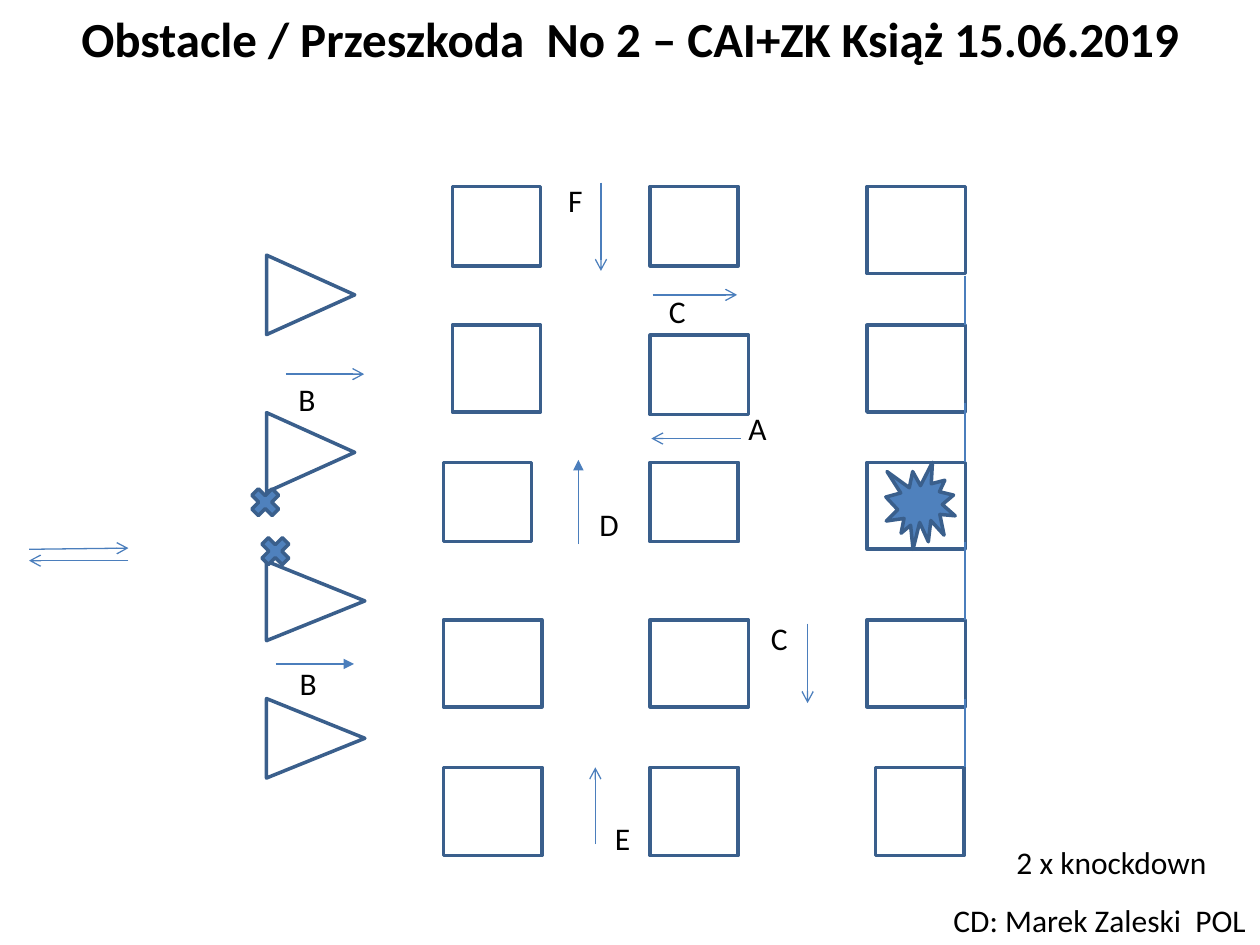
from lxml import etree
from pptx import Presentation
from pptx.dml.color import RGBColor
from pptx.enum.shapes import MSO_CONNECTOR, MSO_SHAPE
from pptx.enum.text import MSO_ANCHOR, MSO_AUTO_SIZE, PP_ALIGN
from pptx.oxml.ns import qn
from pptx.util import Pt

RECT = MSO_SHAPE.RECTANGLE
TRIANGLE = MSO_SHAPE.ISOSCELES_TRIANGLE
BURST = MSO_SHAPE.EXPLOSION1
CROSS = MSO_SHAPE.MATH_MULTIPLY
STRAIGHT = MSO_CONNECTOR.STRAIGHT
MIDDLE = MSO_ANCHOR.MIDDLE
FIT = MSO_AUTO_SIZE.SHAPE_TO_FIT_TEXT
CENTER = PP_ALIGN.CENTER

EDGE, FILL, PATH, INK = "3A5F8C", "4F81BD", "4B7EBC", "000000"
SIDE = 551.5

BOXES = [
    (258.5, 106.6, 50.4, 45.4), (371.5, 106.6, 50.4, 45.4), (495.4, 106.6, 56.2, 49.7),
    (258.5, 185.8, 50.4, 49.7), (371.5, 191.5, 56.2, 45.4), (495.4, 185.8, 56.2, 49.7),
    (253.4, 264.2, 50.4, 45.4), (371.5, 264.2, 50.4, 45.4), (495.4, 264.2, 56.2, 49.7),
    (253.4, 354.2, 56.2, 49.7), (371.5, 354.2, 56.2, 49.7), (495.4, 354.2, 56.2, 49.7),
    (253.4, 438.5, 56.2, 50.4), (371.5, 438.5, 50.4, 50.4), (500.4, 438.5, 50.4, 50.4),
]
WEDGES = [(145.8, 50.4), (235.8, 50.4), (320.7, 56.2), (399.2, 56.2)]
CROSSES = [(140.4, 275.8), (146.2, 303.8)]
RAILS = [(157.5, 185.8), (230.4, 264.2), (309.6, 354.2), (399.6, 438.5)]
ARROWS = [
    (16.6, 313.9, 73.4, 313.2, "arrow"),
    (73.4, 320.4, 16.6, 320.4, "arrow"),
    (423.4, 250.6, 372.2, 250.6, "arrow"),
    (163.4, 213.8, 208.1, 213.8, "arrow"),
    (461.5, 356.4, 461.5, 401.8, "arrow"),
    (343.4, 104.4, 343.4, 154.8, "arrow"),
    (340.2, 482.4, 340.2, 438.5, "arrow"),
    (373, 168.5, 421.2, 168.5, "arrow"),
    (157.7, 379.4, 202.3, 379.4, "triangle"),
    (330.5, 311, 330.5, 262.8, "triangle"),
]
LABELS = [
    ("A", 420.5, 230.4, 25.2), ("B", 163.4, 213.8, 24.5),
    ("B", 164.2, 375.8, 24.5), ("C", 433.4, 349.9, 24.5),
    ("C", 375.1, 163.4, 24.5), ("D", 335.5, 285.1, 25.9),
    ("E", 344.2, 464.4, 23), ("F", 317.5, 100.1, 23),
    ("2 x knockdown", 573.8, 478.1, 124.6),
    ("CD: Marek Zaleski  POL", 537.8, 511.2, 182.2),
]


def paint(part, code):
    part.rgb = RGBColor.from_string(code)


def write(frame, words, size, bold=False):
    para = frame.paragraphs[0]
    run = para.add_run()
    run.text = words
    run.font.name = "Calibri"
    run.font.size = Pt(size)
    run.font.bold = bold
    paint(run.font.color, INK)
    return para


def add_title(slide, words):
    frame = slide.shapes.add_textbox(0, 0, Pt(720), Pt(43.2)).text_frame
    frame.word_wrap = True
    frame.vertical_anchor = MIDDLE
    write(frame, words, 28, True).alignment = CENTER


def add_label(slide, words, x, y, w):
    frame = slide.shapes.add_textbox(Pt(x), Pt(y), Pt(w), Pt(29.1)).text_frame
    frame.word_wrap = False
    frame.auto_size = FIT
    write(frame, words, 18)


def add_mark(slide, kind, x, y, w, h, fill=None):
    mark = slide.shapes.add_shape(kind, Pt(x), Pt(y), Pt(w), Pt(h))
    mark.shadow.inherit = False
    if fill:
        mark.fill.solid()
        paint(mark.fill.fore_color, fill)
    else:
        mark.fill.background()
    paint(mark.line.color, EDGE)
    mark.line.width = Pt(2)
    return mark


def add_wedge(slide, x, y, w, h):
    shift = (w - h) / 2
    add_mark(slide, TRIANGLE, x + shift, y - shift, h, w).rotation = 90


def add_line(slide, x1, y1, x2, y2, head=None):
    line = slide.shapes.add_connector(STRAIGHT, Pt(x1), Pt(y1), Pt(x2), Pt(y2))
    paint(line.line.color, PATH)
    line.line.width = Pt(0.75)
    if head:
        etree.SubElement(line.line._get_or_add_ln(), qn("a:tailEnd"), type=head)
    etree.SubElement(line._element.spPr, qn("a:effectLst"))


def main():
    deck = Presentation()
    deck.slide_width, deck.slide_height = Pt(720), Pt(540)
    slide = deck.slides.add_slide(deck.slide_layouts[6])

    add_title(slide, "Obstacle / Przeszkoda  No 2 – CAI+ZK Książ 15.06.2019")
    for box in BOXES:
        add_mark(slide, RECT, *box)
    for y, w in WEDGES:
        add_wedge(slide, 152.3, y, w, 45.4)
    add_mark(slide, BURST, 506.2, 264.2, 39.6, 49.7, FILL)
    for top, end in RAILS:
        add_line(slide, SIDE, top, SIDE, end)
    for arrow in ARROWS:
        add_line(slide, *arrow)
    for x, y in CROSSES:
        add_mark(slide, CROSS, x, y, 22.3, 22.3, FILL)
    for label in LABELS:
        add_label(slide, *label)

    deck.save("out.pptx")


if __name__ == "__main__":
    main()
